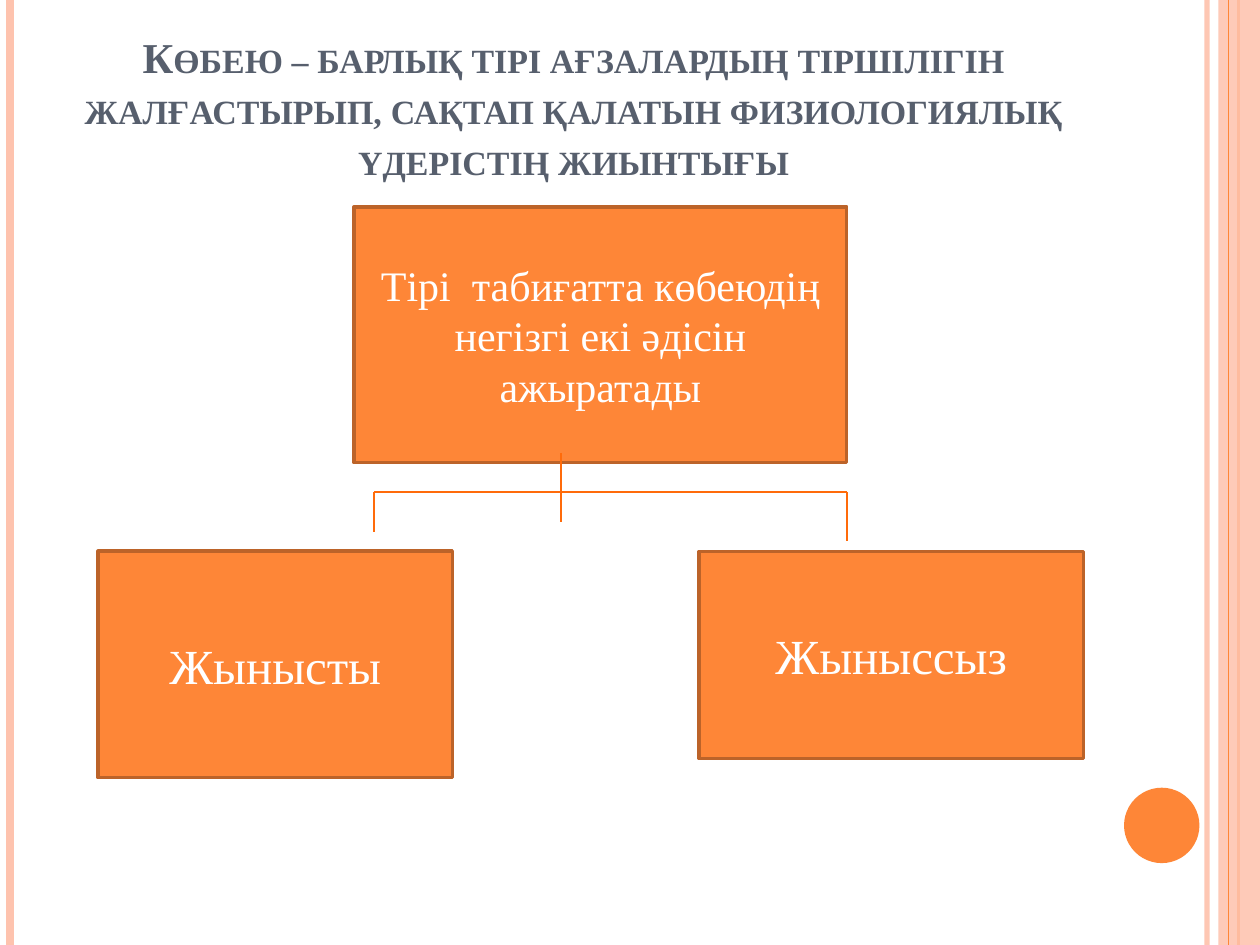
from dataclasses import dataclass

from lxml import etree
from pptx import Presentation
from pptx.dml.color import RGBColor
from pptx.enum.shapes import MSO_CONNECTOR, MSO_SHAPE
from pptx.enum.text import MSO_ANCHOR, PP_ALIGN
from pptx.oxml.ns import qn
from pptx.util import Cm, Pt

RECTANGLE, OVAL = MSO_SHAPE.RECTANGLE, MSO_SHAPE.OVAL
STRAIGHT = MSO_CONNECTOR.STRAIGHT
CENTER = PP_ALIGN.CENTER
TOP, MIDDLE = MSO_ANCHOR.TOP, MSO_ANCHOR.MIDDLE

PAGE_WIDTH, PAGE_HEIGHT = 25.4, 19.05


@dataclass(frozen=True)
class Theme:
    font: str = "Times New Roman"
    orange: str = "FE8637"
    peach: str = "FEC3AE"
    outline: str = "BC6329"
    branch: str = "FF6B0A"
    title_color: str = "575F6D"
    white: str = "FFFFFF"
    title_size: float = 24.3
    title_spacing: float = 29.1
    root_size: float = 24
    leaf_size: float = 28


class SlideBuilder:
    def __init__(self, slide, theme):
        self.shapes = slide.shapes
        self.theme = theme

    def paint(self, fill, element, color, opacity):
        fill.solid()
        fill.fore_color.rgb = RGBColor.from_string(color)
        if opacity < 100:
            shade = element.find(".//" + qn("a:srgbClr"))
            etree.SubElement(shade, qn("a:alpha"), val=str(opacity * 1000))

    def line(self, start, end, color, width, opacity=100):
        line = self.shapes.add_connector(STRAIGHT, *map(Cm, start + end))
        properties = line._element.spPr
        self.paint(line.line.fill, properties, color, opacity)
        line.line.width = Pt(width)
        etree.SubElement(properties, qn("a:effectLst"))

    def stripe(self, x, color, width, opacity=100):
        self.line((x, 0), (x, PAGE_HEIGHT), color, width, opacity)

    def shape(self, kind, place, color, opacity=100):
        shape = self.shapes.add_shape(kind, *map(Cm, place))
        shape.shadow.inherit = False
        self.paint(shape.fill, shape._element.spPr, color, opacity)
        shape.line.fill.background()
        return shape

    def label(self, box, text, size, color, anchor):
        frame = box.text_frame
        frame.word_wrap = True
        frame.vertical_anchor = anchor
        frame.text = text
        para = frame.paragraphs[0]
        para.alignment = CENTER
        span = para.runs[0]
        span.font.name = self.theme.font
        span.font.size = Pt(size)
        span.font.color.rgb = RGBColor.from_string(color)
        return para

    def title(self, text, place):
        theme = self.theme
        box = self.shapes.add_textbox(*map(Cm, place))
        para = self.label(box, text, theme.title_size, theme.title_color, TOP)
        box.text_frame.margin_top = box.text_frame.margin_bottom = 0
        para.line_spacing = Pt(theme.title_spacing)
        span = para.runs[0]
        span.font.bold = True
        span._r.get_or_add_rPr().set("cap", "small")

    def card(self, text, place, size):
        card = self.shape(RECTANGLE, place, self.theme.orange)
        card.line.color.rgb = RGBColor.from_string(self.theme.outline)
        card.line.width = Pt(2)
        self.label(card, text, size, self.theme.white, MIDDLE)


def main():
    deck = Presentation()
    deck.slide_width, deck.slide_height = Cm(PAGE_WIDTH), Cm(PAGE_HEIGHT)
    theme = Theme()
    page = SlideBuilder(deck.slides.add_slide(deck.slide_layouts[6]), theme)

    # Edge decoration
    page.stripe(24.33, theme.peach, 3, opacity=93)
    page.stripe(0.21, theme.peach, 4.5)
    page.stripe(24.97, theme.orange, 1.5)
    page.shape(RECTANGLE, (24.56, 0, 0.84, PAGE_HEIGHT), theme.peach, opacity=87)
    page.stripe(24.77, theme.orange, 0.75)
    page.shape(OVAL, (22.66, 15.88, 1.52, 1.52), theme.orange)

    # Title
    page.title(
        "Көбею – барлық тірі ағзалардың тіршілігін жалғастырып, "
        "сақтап қалатын физиологиялық үдерістің жиынтығы",
        (1.19, 0.63, 20.75, 3.1),
    )

    # Root and its two kinds
    page.card("Тірі  табиғатта көбеюдің негізгі екі әдісін ажыратады",
              (7.14, 4.17, 9.93, 5.16), theme.root_size)
    page.card("Жынысты", (1.98, 11.11, 7.14, 4.57), theme.leaf_size)
    page.card("Жыныссыз", (14.09, 11.12, 7.75, 4.17), theme.leaf_size)

    # Branch lines: stem, crossbar, right and left drops
    left, stem, right, bar = 7.54, 11.31, 17.07, 9.92
    for start, end in (
        ((stem, 9.13), (stem, 10.52)),
        ((left, bar), (right, bar)),
        ((right, bar), (right, 10.91)),
        ((left, bar), (left, 10.72)),
    ):
        page.line(start, end, theme.branch, 1)

    deck.save("out.pptx")


if __name__ == "__main__":
    main()
